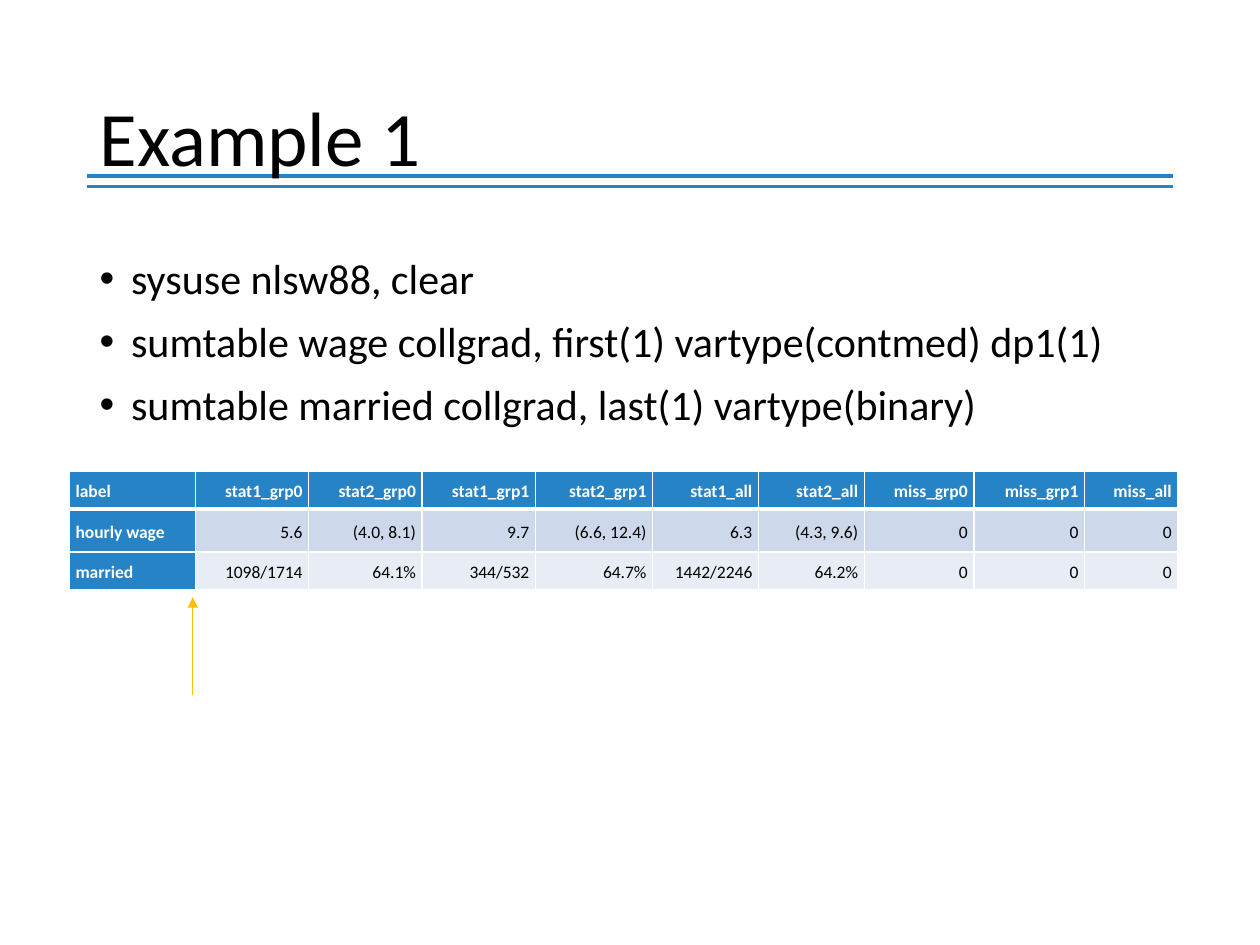
import lxml.etree
import pptx
import pptx.dml.color
import pptx.enum.shapes
import pptx.enum.text
import pptx.oxml.ns
import pptx.util

Inches = pptx.util.Inches
Pt = pptx.util.Pt
qn = pptx.oxml.ns.qn

BLUE, GOLD, WHITE, BLACK = "2683C6", "FFC000", "FFFFFF", "000000"
BAND_FILLS = ["CDD9EA", "E8EDF5"]
COMMANDS = [
    ["sysuse nlsw88, clear"],
    ["sumtable wage collgrad, first(1) vartype(contmed) dp1(1)"],
    ["sumtable married collgrad, last(1) vartype(", "binary", ")"],
]
OUTLINED_WORD = "binary"
COLUMN_WIDTHS = [1, 0.9, 0.9, 0.9, 0.93, 0.84, 0.84, 0.87, 0.88, 0.74]
ROW_HEIGHTS = [0.3, 0.34, 0.3]
SUMMARY = [
    ["label", "stat1_grp0", "stat2_grp0", "stat1_grp1", "stat2_grp1",
     "stat1_all", "stat2_all", "miss_grp0", "miss_grp1", "miss_all"],
    ["hourly wage", "5.6", "(4.0, 8.1)", "9.7", "(6.6, 12.4)",
     "6.3", "(4.3, 9.6)", "0", "0", "0"],
    ["married", "1098/1714", "64.1%", "344/532", "64.7%",
     "1442/2246", "64.2%", "0", "0", "0"],
]


def colour(value):
    return pptx.dml.color.RGBColor.from_string(value)


def format_font(font, size, value, bold=False):
    font.name = "Calibri"
    font.size = Pt(size)
    font.bold = bold
    font.color.rgb = colour(value)


def line_element(tag, value, points):
    line = lxml.etree.Element(qn(tag), w=str(Pt(points)))
    fill = lxml.etree.SubElement(line, qn("a:solidFill"))
    lxml.etree.SubElement(fill, qn("a:srgbClr"), val=value)
    return line


def place(shape, left, top, width, height):
    shape.left, shape.top = Inches(left), Inches(top)
    shape.width, shape.height = Inches(width), Inches(height)
    shape.text_frame.auto_size = pptx.enum.text.MSO_AUTO_SIZE.NONE


def add_line(page, start, end, value, points):
    line = page.shapes.add_connector(
        pptx.enum.shapes.MSO_CONNECTOR.STRAIGHT,
        *[Inches(length) for length in (*start, *end)])
    line.line.color.rgb = colour(value)
    line.line.width = Pt(points)
    lxml.etree.SubElement(line.element.spPr, qn("a:effectLst"))
    return line


def add_heading(page, left, top, width, height):
    """Place the title over a double rule."""
    title = page.shapes.title
    place(title, left, top, width, height)
    title.text_frame.vertical_anchor = pptx.enum.text.MSO_ANCHOR.MIDDLE
    title.text_frame.text = "Example 1"
    para = title.text_frame.paragraphs[0]
    para.alignment = pptx.enum.text.PP_ALIGN.LEFT
    para.line_spacing = 0.9
    format_font(para.runs[0].font, 44, BLACK)
    for offset in (1, 1.08):
        rule = add_line(page, (left, top + offset),
                        (left + width, top + offset), BLUE, 2.25)
        title.element.addprevious(rule.element)


def add_commands(page, left, top, width, height):
    body = page.placeholders[1]
    place(body, left, top, width, height)
    frame = body.text_frame
    for index, pieces in enumerate(COMMANDS):
        para = frame.add_paragraph() if index else frame.paragraphs[0]
        properties = para._p.get_or_add_pPr()
        properties.set("marL", str(Inches(0.25)))
        properties.set("indent", str(-Inches(0.25)))
        lxml.etree.SubElement(properties, qn("a:buFont"), typeface="Arial")
        lxml.etree.SubElement(properties, qn("a:buChar"), char="•")
        para.line_spacing = 0.9
        para.space_before = Pt(10 if index else 0)
        for piece in pieces:
            span = para.add_run()
            span.text = piece
            format_font(span.font, 24, BLACK)
            if piece == OUTLINED_WORD:
                span._r.get_or_add_rPr().insert(
                    0, line_element("a:ln", GOLD, 0.75))


def format_cell(cell, row, column):
    heading = row == 0 or column == 0
    last = row == len(SUMMARY) - 1
    cell.text_frame.text = SUMMARY[row][column]
    cell.margin_left = cell.margin_right = Inches(0.05)
    cell.margin_top = cell.margin_bottom = Inches(0.05)
    anchors = pptx.enum.text.MSO_ANCHOR
    cell.vertical_anchor = anchors.BOTTOM if last else anchors.MIDDLE
    cell.fill.solid()
    cell.fill.fore_color.rgb = colour(BLUE if heading else BAND_FILLS[row - 1])
    para = cell.text_frame.paragraphs[0]
    para.line_spacing = 1.0 if last else 1.15
    if column:
        para.alignment = pptx.enum.text.PP_ALIGN.RIGHT
    format_font(para.runs[0].font, 10, WHITE if heading else BLACK, heading)
    borders = {"a:lnL": 1, "a:lnR": 1,
               "a:lnT": 3 if row == 1 else 1, "a:lnB": 3 if row == 0 else 1}
    properties = cell._tc.get_or_add_tcPr()
    for position, (tag, points) in enumerate(borders.items()):
        properties.insert(position, line_element(tag, WHITE, points))


def add_summary_table(page, left, top):
    frame = page.shapes.add_table(
        len(SUMMARY), len(COLUMN_WIDTHS), Inches(left), Inches(top),
        Inches(sum(COLUMN_WIDTHS)), Inches(sum(ROW_HEIGHTS)))
    table = frame.table
    table.first_col = True
    for column, width in zip(table.columns, COLUMN_WIDTHS):
        column.width = Inches(width)
    for row, height in zip(table.rows, ROW_HEIGHTS):
        row.height = Inches(height)
    for row in range(len(SUMMARY)):
        for column in range(len(COLUMN_WIDTHS)):
            format_cell(table.cell(row, column), row, column)


def add_pointer(page, left, top, height):
    """Draw an arrow that points up at the table."""
    arrow = add_line(page, (left, top + height), (left, top), GOLD, 0.5)
    lxml.etree.SubElement(arrow.line._get_or_add_ln(), qn("a:tailEnd"),
                          type="triangle")


def main():
    deck = pptx.Presentation()
    deck.slide_width, deck.slide_height = Inches(10), Inches(7.5)
    page = deck.slides.add_slide(deck.slide_layouts[1])
    add_heading(page, 0.69, 0.4, 8.62, 1.45)
    add_commands(page, 0.69, 2, 8.62, 4.76)
    add_summary_table(page, 0.55, 3.74)
    add_pointer(page, 1.53, 4.74, 0.78)
    deck.save("out.pptx")


if __name__ == "__main__":
    main()
